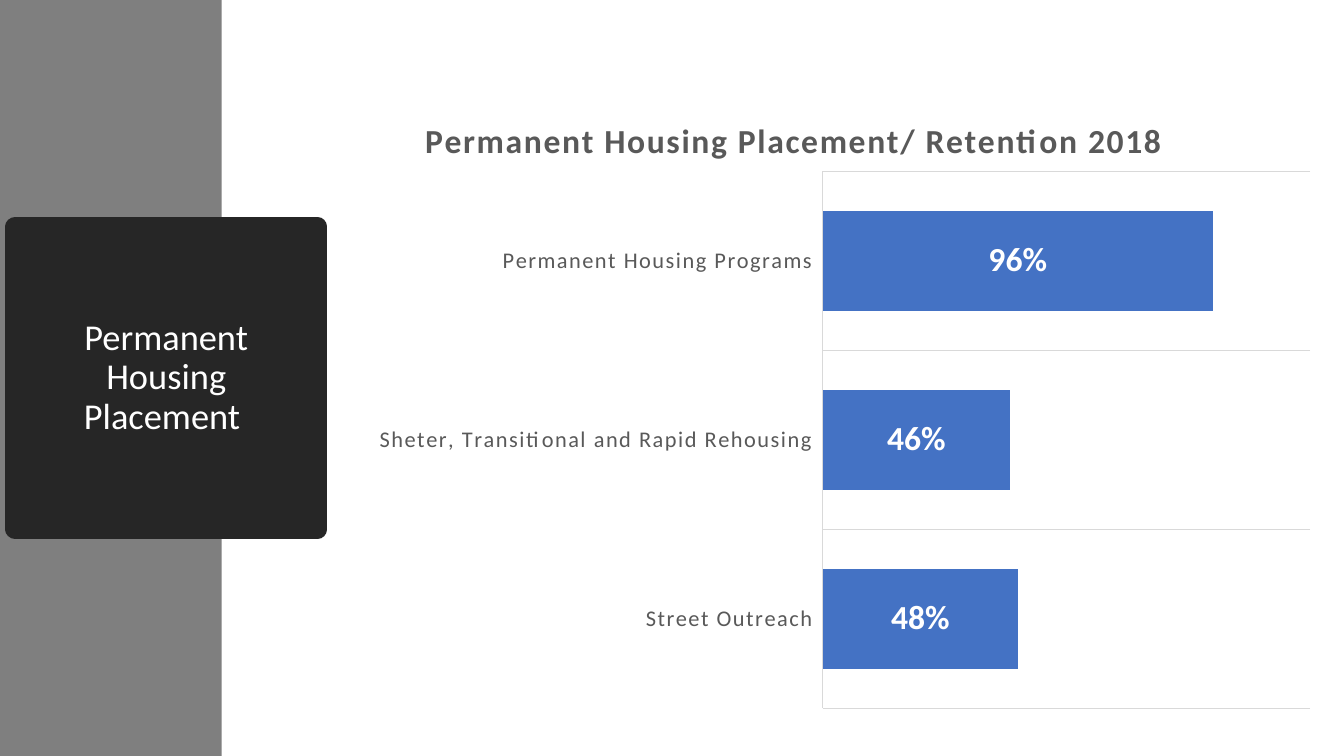
from dataclasses import dataclass
from typing import Any

import pptx
import pptx.chart.data
import pptx.dml.color
import pptx.enum.chart
import pptx.enum.shapes
import pptx.enum.text
import pptx.oxml
import pptx.oxml.ns
import pptx.util
from lxml import etree

GRID = 0.1  # inches per column and per row


@dataclass(frozen=True)
class Theme:
    font: str = "Calibri"
    sidebar: str = "7F7F7F"
    badge: str = "262626"
    light: str = "FFFFFF"
    text: str = "595959"
    rule: str = "D9D9D9"
    bar: str = "4472C4"
    badge_size: float = 26
    heading_size: float = 24
    category_size: float = 16
    base_size: float = 10
    badge_line: float = 13.75
    rule_line: float = 0.75
    tracking: int = 120  # hundredths of a point


@dataclass(frozen=True)
class Area:
    column: float
    row: float
    columns: float
    rows: float

    def box(self) -> dict[str, int]:
        values = (self.column, self.row, self.columns, self.rows)
        return {name: pptx.util.Inches(value * GRID)
                for name, value in zip(("left", "top", "width", "height"), values)}


@dataclass(frozen=True)
class Outcome:
    program: str
    rate: float


THEME = Theme()
SLIDE = Area(0, 0, 133.33, 75)
SIDEBAR = Area(0, 0, 22, 75)
BADGE = Area(1.5, 22.5, 30, 30)
RATES = Area(35.8, 7.9, 96.1, 63.6)
OUTCOMES = (
    Outcome("Street Outreach ", 0.48),
    Outcome("Sheter, Transitional and Rapid Rehousing ", 0.46),
    Outcome("Permanent Housing Programs ", 0.96),
)
# Shares of the chart's size
HEADING_LAYOUT = {"xMode": "edge", "yMode": "edge", "x": 0.06, "y": 0.05}
PLOT_LAYOUT = {"layoutTarget": "inner", "xMode": "edge", "yMode": "edge",
               "x": 0.477, "y": 0.143, "w": 0.503, "h": 0.838}


def apply(target: Any, values: dict[str, Any]) -> None:
    for name, value in values.items():
        setattr(target, name, value)


def rgb(color: str) -> pptx.dml.color.RGBColor:
    return pptx.dml.color.RGBColor.from_string(color)


def paint(fill: Any, color: str) -> None:
    fill.solid()
    fill.fore_color.rgb = rgb(color)


def set_font(font: Any, size: float, color: str, bold: bool = False) -> None:
    apply(font, {"name": THEME.font, "size": pptx.util.Pt(size), "bold": bold})
    font.color.rgb = rgb(color)


def set_rule(line: Any) -> None:
    paint(line.fill, THEME.rule)
    line.width = pptx.util.Pt(THEME.rule_line)


def set_layout(parent: Any, values: dict[str, Any]) -> None:
    """Place a chart part by shares of the chart's size."""
    tag = pptx.oxml.ns.qn
    for old in parent.findall(tag("c:layout")):
        parent.remove(old)
    layout = etree.Element(tag("c:layout"))
    manual = etree.SubElement(layout, tag("c:manualLayout"))
    for name, value in values.items():
        etree.SubElement(manual, tag(f"c:{name}")).set("val", str(value))
    text = parent.find(tag("c:tx"))
    parent.insert(0 if text is None else parent.index(text) + 1, layout)


def add_sidebar(slide: Any) -> None:
    sidebar = slide.shapes.add_shape(
        pptx.enum.shapes.MSO_SHAPE.RECTANGLE, **SIDEBAR.box())
    sidebar.shadow.inherit = False
    paint(sidebar.fill, THEME.sidebar)
    sidebar.line.fill.background()


def format_badge(badge: Any) -> None:
    apply(badge, BADGE.box())
    tag = pptx.oxml.ns.qn
    outline = etree.SubElement(badge.element.spPr, tag("a:prstGeom"), prst="ellipse")
    etree.SubElement(outline, tag("a:avLst"))
    paint(badge.fill, THEME.badge)
    paint(badge.line.fill, THEME.badge)
    badge.line.width = pptx.util.Pt(THEME.badge_line)
    etree.SubElement(badge.element.spPr.find(tag("a:ln")), tag("a:round"))

    frame = badge.text_frame
    inset = pptx.util.Inches(4 * GRID)
    apply(frame, {"text": "Permanent Housing Placement ", "word_wrap": True,
                  "auto_size": pptx.enum.text.MSO_AUTO_SIZE.NONE,
                  "vertical_anchor": pptx.enum.text.MSO_ANCHOR.MIDDLE,
                  "margin_left": inset, "margin_right": inset})
    paragraph = frame.paragraphs[0]
    apply(paragraph, {"alignment": pptx.enum.text.PP_ALIGN.CENTER, "line_spacing": 0.9})
    set_font(paragraph.runs[0].font, THEME.badge_size, THEME.light)


def add_rates(slide: Any) -> None:
    data = pptx.chart.data.CategoryChartData(number_format="0%")
    data.categories = [outcome.program for outcome in OUTCOMES]
    data.add_series("Series 1", [outcome.rate for outcome in OUTCOMES])
    box = RATES.box()
    chart = slide.shapes.add_chart(
        pptx.enum.chart.XL_CHART_TYPE.BAR_STACKED,
        box["left"], box["top"], box["width"], box["height"], data).chart
    set_font(chart.font, THEME.base_size, "000000")
    chart.has_legend = False

    # Heading
    heading = chart.chart_title
    heading.text_frame.text = "Permanent Housing Placement/ Retention 2018"
    heading_run = heading.text_frame.paragraphs[0].runs[0]
    set_font(heading_run.font, THEME.heading_size, THEME.text, bold=True)
    heading_run.font._element.set("spc", str(THEME.tracking))
    heading.include_in_layout = False
    set_layout(heading._element, HEADING_LAYOUT)

    # Axes
    programs, rates = chart.category_axis, chart.value_axis
    no_tick = pptx.enum.chart.XL_TICK_MARK.NONE
    apply(programs, {"major_tick_mark": no_tick, "minor_tick_mark": no_tick,
                     "has_major_gridlines": True})
    set_rule(programs.format.line)
    set_rule(programs.major_gridlines.format.line)
    program_font = programs.tick_labels.font
    set_font(program_font, THEME.category_size, THEME.text)
    program_font._element.set("spc", str(THEME.tracking))
    apply(rates, {"minimum_scale": 0, "maximum_scale": 1.2,
                  "has_major_gridlines": False, "visible": False})

    # Bars and their labels
    plot = chart.plots[0]
    apply(plot, {"gap_width": 79, "overlap": 100, "vary_by_categories": False})
    bars = plot.series[0]
    paint(bars.format.fill, THEME.bar)
    labels = bars.data_labels
    apply(labels, {"show_value": True, "number_format": "0%",
                   "number_format_is_linked": False,
                   "position": pptx.enum.chart.XL_LABEL_POSITION.CENTER})
    set_font(labels.font, THEME.heading_size, THEME.light, bold=True)
    set_layout(chart._chartSpace.chart.plotArea, PLOT_LAYOUT)


def main() -> None:
    deck = pptx.Presentation()
    size = SLIDE.box()
    apply(deck, {"slide_width": size["width"], "slide_height": size["height"]})
    slide = deck.slides.add_slide(deck.slide_layouts.get_by_name("Title Only"))
    paint(slide.background.fill, THEME.light)

    add_sidebar(slide)
    badge = slide.shapes.title
    # Bring the title in front of the sidebar
    slide.shapes._spTree.append(badge.element)
    format_badge(badge)
    add_rates(slide)
    deck.save("out.pptx")


if __name__ == "__main__":
    main()
